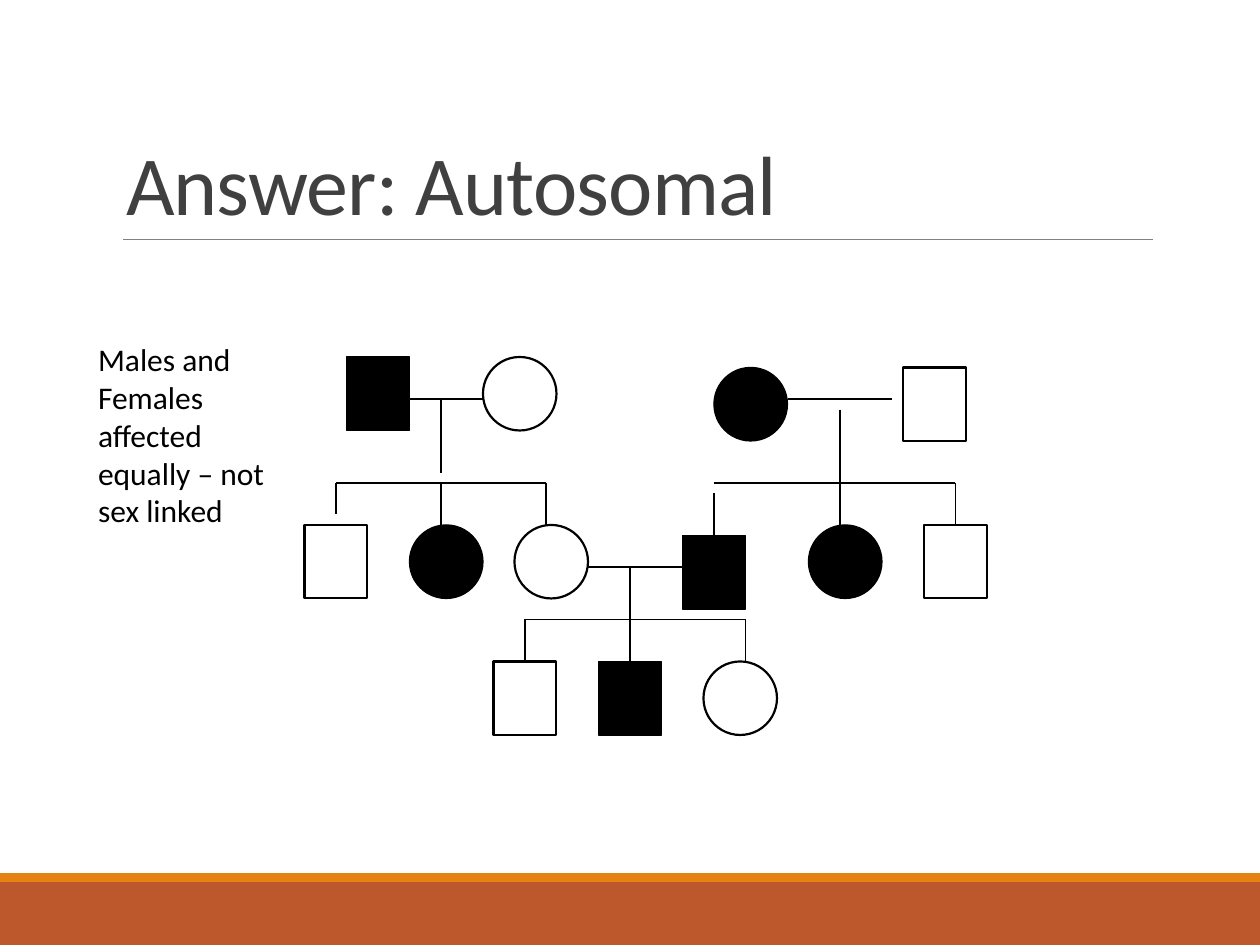
from lxml import etree
from pptx import Presentation, util as u
from pptx.dml.color import RGBColor
from pptx.enum import shapes, text
from pptx.oxml import ns

COLORS = {"rust": "BD582C", "orange": "E48312", "rule": "808080",
          "title": "404040", "black": "000000", "white": "FFFFFF"}
CELL = u.Inches(10) // 120  # the slide is a grid of 120 columns and 90 rows


def add_block(parent, kind, column, row, columns, rows, fill, line_width=None):
    """Add a filled preset shape placed in grid cells."""
    box = [u.Emu(round(value * CELL)) for value in (column, row, columns, rows)]
    shape = parent.add_shape(kind, *box)
    shape.shadow.inherit = False
    shape.fill.solid()
    shape.fill.fore_color.rgb = RGBColor.from_string(COLORS[fill])
    if line_width:
        shape.line.color.rgb = RGBColor.from_string(COLORS["black"])
        shape.line.width = u.Pt(line_width)
    else:
        shape.line.fill.background()
    return shape


def add_line(parent, ends, color, width):
    """Add a shadowless straight line between two grid points."""
    line = parent.add_connector(shapes.MSO_CONNECTOR.STRAIGHT,
                                *[u.Emu(round(value * CELL)) for value in ends])
    line.line.color.rgb = RGBColor.from_string(COLORS[color])
    line.line.width = u.Pt(width)
    etree.SubElement(line._element.spPr, ns.qn("a:effectLst"))
    return line


presentation = Presentation()
presentation.slide_width, presentation.slide_height = 120 * CELL, 90 * CELL
slide = presentation.slides.add_slide(presentation.slide_layouts[5])

# Footer bands and the rule under the title
RECTANGLE, OVAL = shapes.MSO_SHAPE.RECTANGLE, shapes.MSO_SHAPE.OVAL
add_block(slide.shapes, RECTANGLE, 0, 84, 120, 6, "rust")
add_block(slide.shapes, RECTANGLE, 0, 83.15, 120, 0.85, "orange")
add_line(slide.shapes, (11.75, 22.8, 109.8, 22.8), "rule", 0.5)

# Title and explanation
title = slide.shapes.title
title.left, title.top, title.width, title.height = (
    u.Inches(value) for value in (0.9, 0.31, 8.25, 1.59))
note = slide.shapes.add_textbox(
    *(u.Inches(value) for value in (0.68, 2.65, 1.67, 1.62)))
texts = [
    (title, "Answer: Autosomal", "title", 48,
     {"vertical_anchor": text.MSO_ANCHOR.BOTTOM, "auto_size": text.MSO_AUTO_SIZE.NONE},
     {"alignment": text.PP_ALIGN.LEFT, "line_spacing": 0.85}),
    (note, "Males and Females affected equally – not sex linked", "black", 18,
     {"auto_size": text.MSO_AUTO_SIZE.SHAPE_TO_FIT_TEXT}, {}),
]
for shape, wording, color, size, frame_format, paragraph_format in texts:
    frame = shape.text_frame
    frame.word_wrap = True
    paragraph = frame.paragraphs[0]
    run = paragraph.add_run()
    run.text = wording
    run.font.color.rgb = RGBColor.from_string(COLORS[color])
    formats = [(frame, frame_format), (paragraph, paragraph_format),
               (run.font, {"name": "Calibri", "size": u.Pt(size)})]
    for target, values in formats:
        for name, value in values.items():
            setattr(target, name, value)
title.text_frame.paragraphs[0].runs[0].font._element.set("spc", "-50")

# Pedigree members: sex, affected, column, row
pedigree = slide.shapes.add_group_shape().shapes
members = {
    "grandfather 1": ("male", True, 33, 34),
    "grandmother 1": ("female", False, 46, 34),
    "grandmother 2": ("female", True, 68, 35),
    "grandfather 2": ("male", False, 86, 35),
    "uncle 1": ("male", False, 29, 50),
    "aunt 1": ("female", True, 39, 50),
    "mother": ("female", False, 49, 50),
    "father": ("male", True, 65, 51),
    "aunt 2": ("female", True, 77, 50),
    "uncle 2": ("male", False, 88, 50),
    "son 1": ("male", False, 47, 63),
    "son 2": ("male", True, 57, 63),
    "daughter": ("female", False, 67, 63),
}
people = {}
for name, (sex, affected, column, row) in members.items():
    kind, columns = (RECTANGLE, 6) if sex == "male" else (OVAL, 7)
    fill, line_width = ("black", 0.75) if affected else ("white", 1.25)
    people[name] = add_block(pedigree, kind, column, row, columns, 7, fill, line_width)

# Family lines: start and end points, and the person whose top they join
family_lines = [
    # first grandparents and their children
    (39, 38, 46, 38, None), (42, 38, 42, 45, None), (32, 46, 52, 46, None),
    (32, 46, 32, 49, None), (42, 46, 42, 50, None), (52, 46, 52, 50, None),
    # second grandparents and their children
    (75, 38, 85, 38, None), (80, 39, 80, 46, None), (68, 46, 91, 46, None),
    (68, 47, 68, 51, "father"), (80, 46, 80, 50, None), (91, 46, 91, 50, "uncle 2"),
    # parents and their children
    (56, 54, 65, 54, None), (60, 54, 60, 59, None), (50, 59, 71, 59, None),
    (50, 59, 50, 63, "son 1"), (60, 59, 60, 63, "son 2"), (71, 59, 71, 63, None),
]
for *ends, person in family_lines:
    line = add_line(pedigree, ends, "black", 0.75)
    if person:
        line.end_connect(people[person], 0)

presentation.save("out.pptx")
